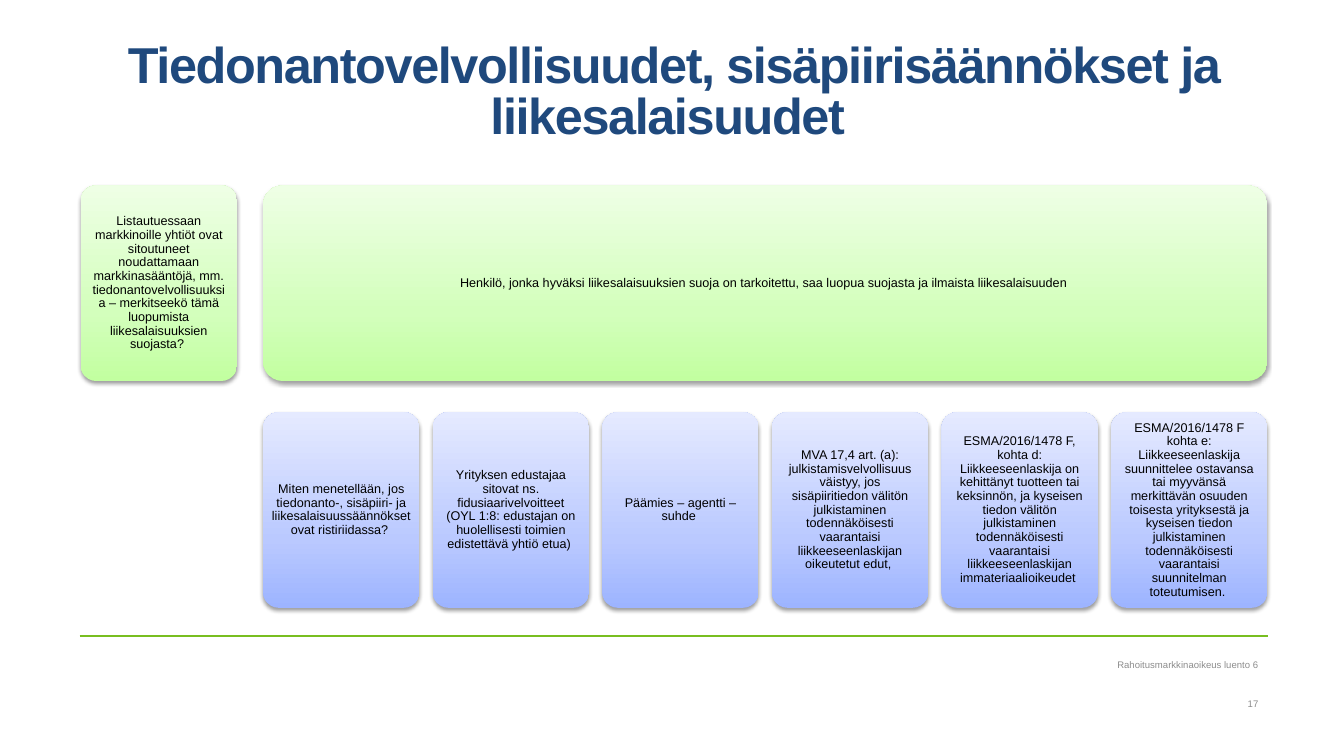
import pptx
import pptx.util
import pptx.oxml
import pptx.oxml.ns
import pptx.dml.color
import pptx.enum.shapes
import pptx.enum.text
from dataclasses import dataclass

Inches, Pt = pptx.util.Inches, pptx.util.Pt
RGB = pptx.dml.color.RGBColor.from_string
ALIGN, ANCHOR = pptx.enum.text.PP_ALIGN, pptx.enum.text.MSO_ANCHOR


@dataclass(frozen=True)
class Theme:
    font: str = "Arial"
    title: str = "1F497D"
    body: str = "000000"
    footer: str = "8C8C8C"
    rule: str = "78BE20"
    green: tuple = ("C2FFA0", "D3FFBC", "EEFFE5")
    blue: tuple = ("9DB4FF", "BAC9FF", "E5EAFF")
    title_size: float = 36
    body_size: float = 9
    footer_size: float = 6.8


theme = Theme()


def set_text(sp, text, size, color, align, anchor, insets, spacing=1.0):
    tf = sp.text_frame
    tf.word_wrap = True
    tf.vertical_anchor = anchor
    tf.margin_left, tf.margin_top, tf.margin_right, tf.margin_bottom = map(Inches, insets)
    p = tf.paragraphs[0]
    p.alignment, p.line_spacing = align, spacing
    r = p.add_run()
    r.text = text
    r.font.name, r.font.size = theme.font, Pt(size)
    r.font.color.rgb = RGB(color)
    return r


def add_card(left, top, width, colors, text):
    sp = slide.shapes.add_shape(pptx.enum.shapes.MSO_SHAPE.ROUNDED_RECTANGLE,
                                Inches(left), Inches(top), Inches(width), Inches(CARD_H))
    sp.adjustments[0] = 0.1
    sp.line.fill.background()
    sp.shadow.inherit = False
    ns = pptx.oxml.ns.nsdecls("a")
    # Three-stop gradient, running from the bottom up
    stops = "".join(f'<a:gs pos="{pos}"><a:srgbClr val="{c}"/></a:gs>'
                    for pos, c in zip((0, 35000, 100000), colors))
    sp.element.spPr.insert(2, pptx.oxml.parse_xml(
        f'<a:gradFill {ns} rotWithShape="1"><a:gsLst>{stops}</a:gsLst>'
        '<a:lin ang="16200000" scaled="0"/></a:gradFill>'))
    # Soft shadow below the card
    effects = sp.element.spPr.find(pptx.oxml.ns.qn("a:effectLst"))
    effects.append(pptx.oxml.parse_xml(
        f'<a:outerShdw {ns} blurRad="{Pt(3.1)}" dist="{Pt(1.6)}" dir="5400000" rotWithShape="0">'
        '<a:srgbClr val="000000"><a:alpha val="38000"/></a:srgbClr></a:outerShdw>'))
    set_text(sp, text, theme.body_size, theme.body, ALIGN.CENTER, ANCHOR.MIDDLE,
             (0.04, 0.04, 0.04, 0.04), 0.9)


prs = pptx.Presentation()
prs.slide_width, prs.slide_height = Inches(13.33), Inches(7.5)
slide = prs.slides.add_slide(prs.slide_layouts[6])

# Rule above the footer
rule = slide.shapes.add_connector(pptx.enum.shapes.MSO_CONNECTOR.STRAIGHT,
                                  Inches(0.79), Inches(6.31), Inches(12.58), Inches(6.31))
rule.line.color.rgb = RGB(theme.rule)
rule.line.width = Pt(1)
rule.element.spPr.append(pptx.oxml.parse_xml(f'<a:effectLst {pptx.oxml.ns.nsdecls("a")}/>'))

# Title
title = slide.shapes.add_textbox(Inches(0.79), Inches(0.42), Inches(11.79), Inches(1.31))
r = set_text(title, "Tiedonantovelvollisuudet, sisäpiirisäännökset ja liikesalaisuudet ",
             theme.title_size, theme.title, ALIGN.CENTER, ANCHOR.TOP, (0, 0, 0, 0), 0.85)
r.font.bold = True
r.font._element.set("spc", "-100")

# Footer and slide number
for top, height, text in ((6.51, 0.17, "Rahoitusmarkkinaoikeus luento 6"), (6.89, 0.18, "17")):
    box = slide.shapes.add_textbox(Inches(7.2), Inches(top), Inches(5.28), Inches(height))
    set_text(box, text, theme.footer_size, theme.footer, ALIGN.RIGHT, ANCHOR.MIDDLE,
             (0.1, 0.05, 0, 0.05))

# Card grid: one green card, then a wide one spanning the blue row
CARD_W, CARD_H, PITCH = 1.55, 1.94, 1.682
TOP_ROW, BOTTOM_ROW = 1.84, 4.09
FIRST_LEFT, ROW_LEFT = 0.8, 2.61

blue_texts = [
    "Miten menetellään, jos tiedonanto-, sisäpiiri- ja liikesalaisuussäännökset "
    "ovat ristiriidassa? ",
    "Yrityksen edustajaa sitovat ns. fidusiaarivelvoitteet (OYL 1:8: edustajan on "
    "huolellisesti toimien edistettävä yhtiö etua) ",
    "Päämies – agentti –suhde ",
    "MVA 17,4 art. (a): julkistamisvelvollisuus väistyy, jos sisäpiiritiedon välitön "
    "julkistaminen todennäköisesti vaarantaisi liikkeeseenlaskijan oikeutetut edut, ",
    "ESMA/2016/1478 F, kohta d: Liikkeeseenlaskija on kehittänyt tuotteen tai keksinnön, "
    "ja kyseisen tiedon välitön julkistaminen todennäköisesti vaarantaisi "
    "liikkeeseenlaskijan immateriaalioikeudet ",
    "ESMA/2016/1478 F kohta e: Liikkeeseenlaskija suunnittelee ostavansa tai myyvänsä "
    "merkittävän osuuden toisesta yrityksestä ja kyseisen tiedon julkistaminen "
    "todennäköisesti vaarantaisi suunnitelman toteutumisen. ",
]
row_width = (len(blue_texts) - 1) * PITCH + CARD_W

add_card(FIRST_LEFT, TOP_ROW, CARD_W, theme.green,
         "Listautuessaan markkinoille yhtiöt ovat sitoutuneet noudattamaan markkinasääntöjä, "
         "mm. tiedonantovelvollisuuksia – merkitseekö tämä luopumista "
         "liikesalaisuuksien suojasta? ")
add_card(ROW_LEFT, TOP_ROW, row_width, theme.green,
         "Henkilö, jonka hyväksi liikesalaisuuksien suoja on tarkoitettu, saa luopua suojasta "
         "ja ilmaista liikesalaisuuden ")
for i, text in enumerate(blue_texts):
    add_card(ROW_LEFT + i * PITCH, BOTTOM_ROW, CARD_W, theme.blue, text)

prs.save("out.pptx")
